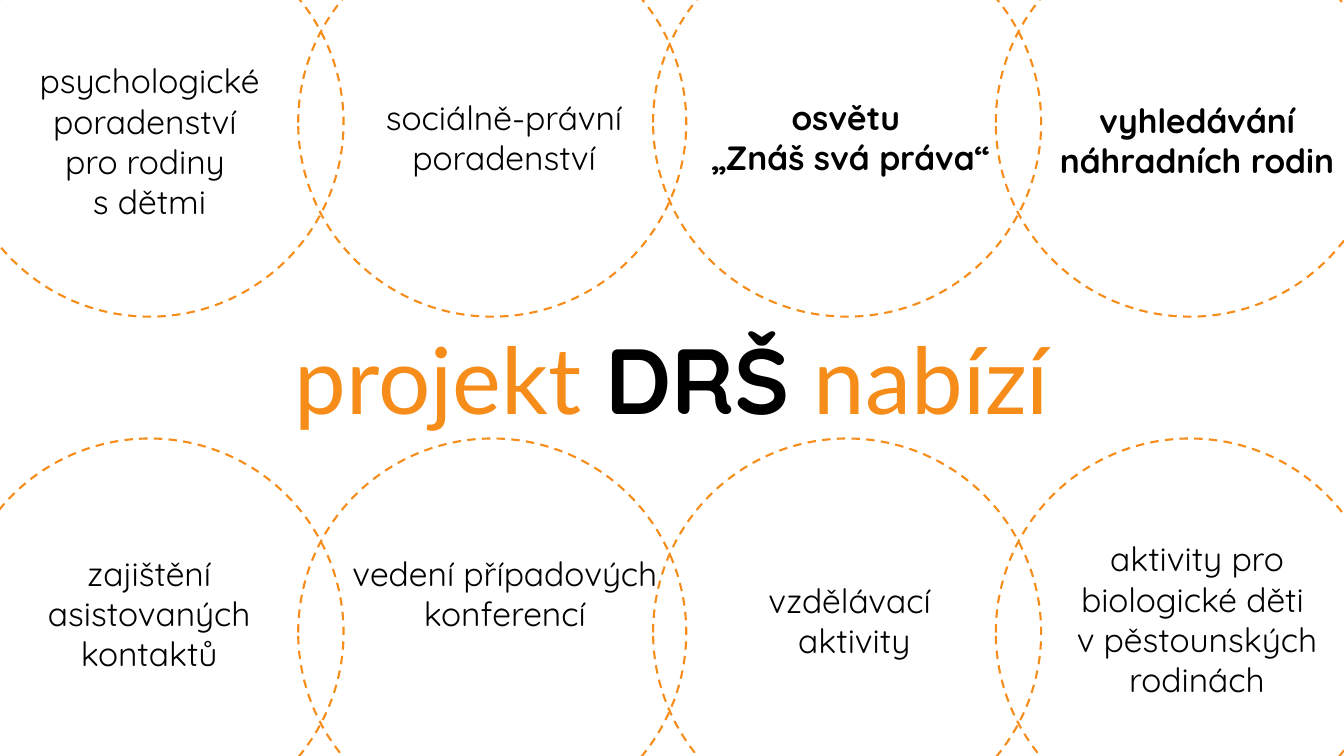
"""Build the slide listing what the DRŠ project offers."""
import dataclasses
import itertools
import typing

import pptx
import pptx.dml.color
import pptx.enum.dml
import pptx.enum.shapes
import pptx.enum.text
import pptx.slide
import pptx.text.text
import pptx.util

ORANGE = pptx.dml.color.RGBColor(0xF6, 0x8D, 0x1A)
BLACK = pptx.dml.color.RGBColor(0x00, 0x00, 0x00)

COLUMNS, ROWS = 160, 90
CELL = pptx.util.Inches(7.5) / ROWS

CIRCLE_COLUMNS = (-5.3, 35.5, 77.75, 118.55)
CIRCLE_ROWS = (-8.5, 52.2)
CIRCLE_SIZE = 46.2
LABEL_WIDTH = COLUMNS / 4

LABEL_FORMAT = {"name": "Quicksand", "size": pptx.util.Pt(24), "bold": False}
TITLE_FORMAT = {"name": "Lato", "size": pptx.util.Pt(66), "bold": False}


@dataclasses.dataclass(frozen=True)
class Label:
    """A service offered, placed in grid columns and rows."""
    text: str
    column: float
    row: float
    height: float
    bold: bool = False


@dataclasses.dataclass(frozen=True)
class TitlePart:
    """A stretch of the title with its own look."""
    text: str
    color: pptx.dml.color.RGBColor
    changes: dict[str, typing.Any] = dataclasses.field(default_factory=dict)


LABELS = (
    Label("psychologické poradenství \vpro rodiny \vs dětmi", -2.2, 6.6, 25.4),
    Label("sociálně-právní poradenství", 40, 10.9, 10.9),
    Label("osvětu \v„Znáš svá práva“", 81.25, 10.9, 10.9, bold=True),
    Label("vyhledávání náhradních rodin", 122.5, 11.3, 10.9, bold=True),
    Label("zajištění asistovaných kontaktů", -2.25, 65.2, 15.7),
    Label("vedení případových konferencí", 40.1, 65.2, 15.7),
    Label("vzdělávací \vaktivity", 81.7, 68.4, 10.9),
    Label("aktivity pro biologické děti \vv pěstounských rodinách", 122.5, 63.5, 20.6),
)

TITLE = (
    TitlePart("projekt ", ORANGE),
    TitlePart("DRŠ", BLACK, {"name": "Quicksand", "bold": True}),
    TitlePart(" nabízí", ORANGE),
)


def cells(*counts: float) -> list[int]:
    """Turn counts of grid cells into lengths."""
    return [round(count * CELL) for count in counts]


def format_span(span: typing.Any, values: dict[str, typing.Any],
                color: pptx.dml.color.RGBColor) -> None:
    """Apply font values and a colour to a run."""
    for name, value in values.items():
        setattr(span.font, name, value)
    span.font.color.rgb = color


def draw_circle(page: pptx.slide.Slide, column: float, row: float) -> None:
    """Draw a dashed, unfilled circle."""
    circle = page.shapes.add_shape(
        pptx.enum.shapes.MSO_SHAPE.OVAL, *cells(column, row, CIRCLE_SIZE, CIRCLE_SIZE))
    circle.shadow.inherit = False
    circle.fill.background()
    circle.line.color.rgb = ORANGE
    circle.line.width = pptx.util.Pt(1.5)
    circle.line.dash_style = pptx.enum.dml.MSO_LINE.DASH


def add_centred_paragraph(page: pptx.slide.Slide, column: float, row: float,
                          width: float, height: float) -> typing.Any:
    """Add a wrapping text box and return its centred paragraph."""
    box = page.shapes.add_textbox(*cells(column, row, width, height))
    box.text_frame.word_wrap = True
    box.text_frame.auto_size = pptx.enum.text.MSO_AUTO_SIZE.SHAPE_TO_FIT_TEXT
    para = box.text_frame.paragraphs[0]
    para.alignment = pptx.enum.text.PP_ALIGN.CENTER
    return para


def draw_title(page: pptx.slide.Slide) -> None:
    """Draw the title between the two rows of circles."""
    para = add_centred_paragraph(page, 0, 37.8, COLUMNS, 14.5)
    for part in TITLE:
        span = para.add_run()
        span.text = part.text
        format_span(span, TITLE_FORMAT | part.changes, part.color)


def draw_label(page: pptx.slide.Slide, label: Label) -> None:
    """Draw the text of one circle."""
    para = add_centred_paragraph(page, label.column, label.row, LABEL_WIDTH, label.height)
    para.text = label.text
    for span in para.runs:
        format_span(span, LABEL_FORMAT | {"bold": label.bold}, BLACK)


def main() -> None:
    """Build and save the deck."""
    deck = pptx.Presentation()
    deck.slide_width, deck.slide_height = cells(COLUMNS, ROWS)
    page = deck.slides.add_slide(deck.slide_layouts[6])
    for row, column in itertools.product(CIRCLE_ROWS, CIRCLE_COLUMNS):
        draw_circle(page, column, row)
    draw_title(page)
    for label in LABELS:
        draw_label(page, label)
    deck.save("out.pptx")


if __name__ == "__main__":
    main()
